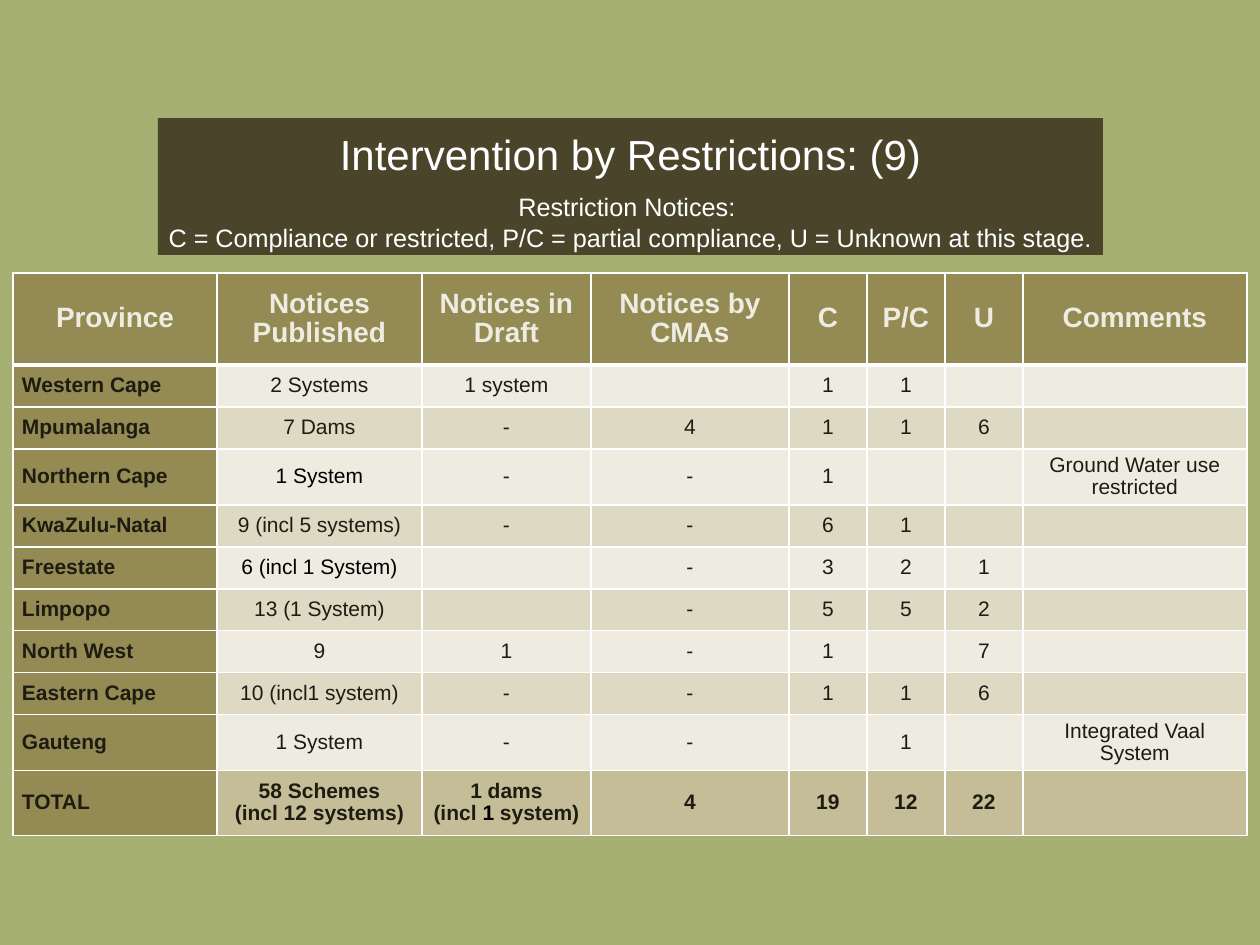
from lxml.etree import SubElement
from pptx import Presentation
from pptx.dml.color import RGBColor
from pptx.enum.shapes import MSO_SHAPE
from pptx.enum.text import MSO_ANCHOR as Anchor, MSO_AUTO_SIZE as AutoSize, PP_ALIGN as Align
from pptx.oxml.ns import qn
from pptx.util import Emu, Pt

EMU_PER_PX = 914400 / 126
TITLE_ONLY = 5

COLUMN_WIDTHS = [204, 205, 169, 198, 78, 78, 78, 224]
ROW_HEIGHTS = [92, 42, 42, 56, 42, 42, 42, 42, 42, 56, 65]

# Text between asterisks is set in black.
NOTICES = [
    ["Province", "Notices Published", "Notices in Draft", "Notices by CMAs",
     "C", "P/C", "U", "Comments"],
    ["Western Cape", "2 Systems", "1 system", "", "1", "1", "", ""],
    ["Mpumalanga", "7 Dams", "-", "4", "1", "1", "6", ""],
    ["Northern Cape", "*1 System*", "-", "-", "1", "", "",
     "Ground Water use restricted"],
    ["KwaZulu-Natal", "9 (incl 5 systems)", "-", "-", "6", "1", "", ""],
    ["Freestate", "*6 (incl 1 System)*", "", "-", "3", "2", "1", ""],
    ["Limpopo", "13 (1 System)", "", "-", "5", "5", "2", ""],
    ["North West", "9", "1", "-", "1", "", "7", ""],
    ["Eastern Cape", "10 (incl1 system)", "-", "-", "1", "1", "6", ""],
    ["Gauteng", "1 System", "-", "-", "", "1", "", "Integrated Vaal System"],
    ["TOTAL", "58 Schemes\n(incl 12 systems)", "1 dams\n(incl *1* system)",
     "4", "19", "12", "22", ""],
]


def px(length):
    return Emu(round(length * EMU_PER_PX))


def color(hex_code):
    return RGBColor.from_string(hex_code)


def apply(target, values):
    for name, value in values.items():
        setattr(target, name, value)


class RestrictionSlide:
    FONT = "Arial"
    BACKGROUND, BANNER = "A7B073", "4A452A"
    HEADING, TOTAL = "948A54", "C4BD97"
    BANDS = ["DDD9C3", "EEECE1"]
    INK, BLACK, WHITE, CREAM = "1E1C11", "000000", "FFFFFF", "EEECE1"
    MARGINS = {"margin_left": px(9), "margin_right": px(9),
               "margin_top": px(5), "margin_bottom": px(5)}

    def __init__(self, deck):
        self.slide = deck.slides.add_slide(deck.slide_layouts[TITLE_ONLY])
        backdrop = self.slide.background.fill
        backdrop.solid()
        backdrop.fore_color.rgb = color(self.BACKGROUND)

    def set_text(self, frame, text, size, ink, bold=False, align=Align.CENTER, spacing=1.0):
        """Fill a text frame, one paragraph a line; *marked* parts turn black."""
        for index, line in enumerate(text.split("\n")):
            paragraph = frame.paragraphs[0] if index == 0 else frame.add_paragraph()
            apply(paragraph, {"alignment": align, "line_spacing": spacing})
            for part, words in enumerate(line.split("*")):
                if words:
                    run = paragraph.add_run()
                    run.text = words
                    apply(run.font, {"name": self.FONT, "size": Pt(size), "bold": bold})
                    run.font.color.rgb = color(self.BLACK if part % 2 else ink)
            if not line:
                # Keeps an empty cell from growing to the default text size.
                SubElement(paragraph._p, qn("a:endParaRPr"), sz=str(size * 100))

    def banner(self, shape, text, size):
        shape.fill.solid()
        shape.fill.fore_color.rgb = color(self.BANNER)
        apply(shape.text_frame, {"word_wrap": True, "auto_size": AutoSize.NONE,
                                 "vertical_anchor": Anchor.MIDDLE, **self.MARGINS})
        self.set_text(shape.text_frame, text, size, self.WHITE)

    def title(self, text, left, top, width, height):
        heading = self.slide.shapes.title
        apply(heading, {"left": px(left), "top": px(top),
                        "width": px(width), "height": px(height)})
        self.banner(heading, text, 24)

    def legend(self, text, left, top, width, height):
        key = self.slide.shapes.add_shape(
            MSO_SHAPE.RECTANGLE, px(left), px(top), px(width), px(height))
        key.shadow.inherit = False
        key.line.fill.background()
        self.banner(key, text, 14.4)

    def borders(self, cell, widths):
        """Draw white cell borders; widths in points, keyed L, R, T, B."""
        properties = cell._tc.get_or_add_tcPr()
        for side, width in widths.items():
            edge = SubElement(properties, qn(f"a:ln{side}"), w=str(Pt(width)))
            paint = SubElement(edge, qn("a:solidFill"))
            SubElement(paint, qn("a:srgbClr"), val=self.WHITE)

    def cell_look(self, row, column, last_row):
        """Return the fill and the text format for a place in the table."""
        if row == 0:
            return self.HEADING, {"size": 16, "ink": self.CREAM, "bold": True}
        look = {"size": 12, "ink": self.INK, "bold": column == 0 or row == last_row}
        if column == 0:
            return self.HEADING, {**look, "align": Align.LEFT}
        return self.TOTAL if row == last_row else self.BANDS[row % 2], look

    def table(self, rows, left, top, widths, heights):
        grid = self.slide.shapes.add_table(
            len(rows), len(widths), px(left), px(top),
            px(sum(widths)), px(sum(heights))).table
        for column, width in zip(grid.columns, widths):
            column.width = px(width)
        for row, height in zip(grid.rows, heights):
            row.height = px(height)
        for r, texts in enumerate(rows):
            for c, text in enumerate(texts):
                cell = grid.cell(r, c)
                fill, look = self.cell_look(r, c, len(rows) - 1)
                self.borders(cell, {"L": 1, "R": 1, "T": 3 if r == 1 else 1,
                                    "B": 3 if r == 0 else 1})
                cell.fill.solid()
                cell.fill.fore_color.rgb = color(fill)
                apply(cell, {"vertical_anchor": Anchor.MIDDLE, **self.MARGINS})
                self.set_text(cell.text_frame, text, spacing=0.95, **look)


def main():
    deck = Presentation()
    apply(deck, {"slide_width": px(1260), "slide_height": px(945)})
    page = RestrictionSlide(deck)
    page.title("Intervention by Restrictions: (9)", 158, 118, 945, 71)
    page.table(NOTICES, 13, 273, COLUMN_WIDTHS, ROW_HEIGHTS)
    page.legend("Restriction Notices: \nC = Compliance or restricted, "
                "P/C = partial compliance, U = Unknown at this stage.",
                158, 189, 945, 66)
    deck.save("out.pptx")


if __name__ == "__main__":
    main()
